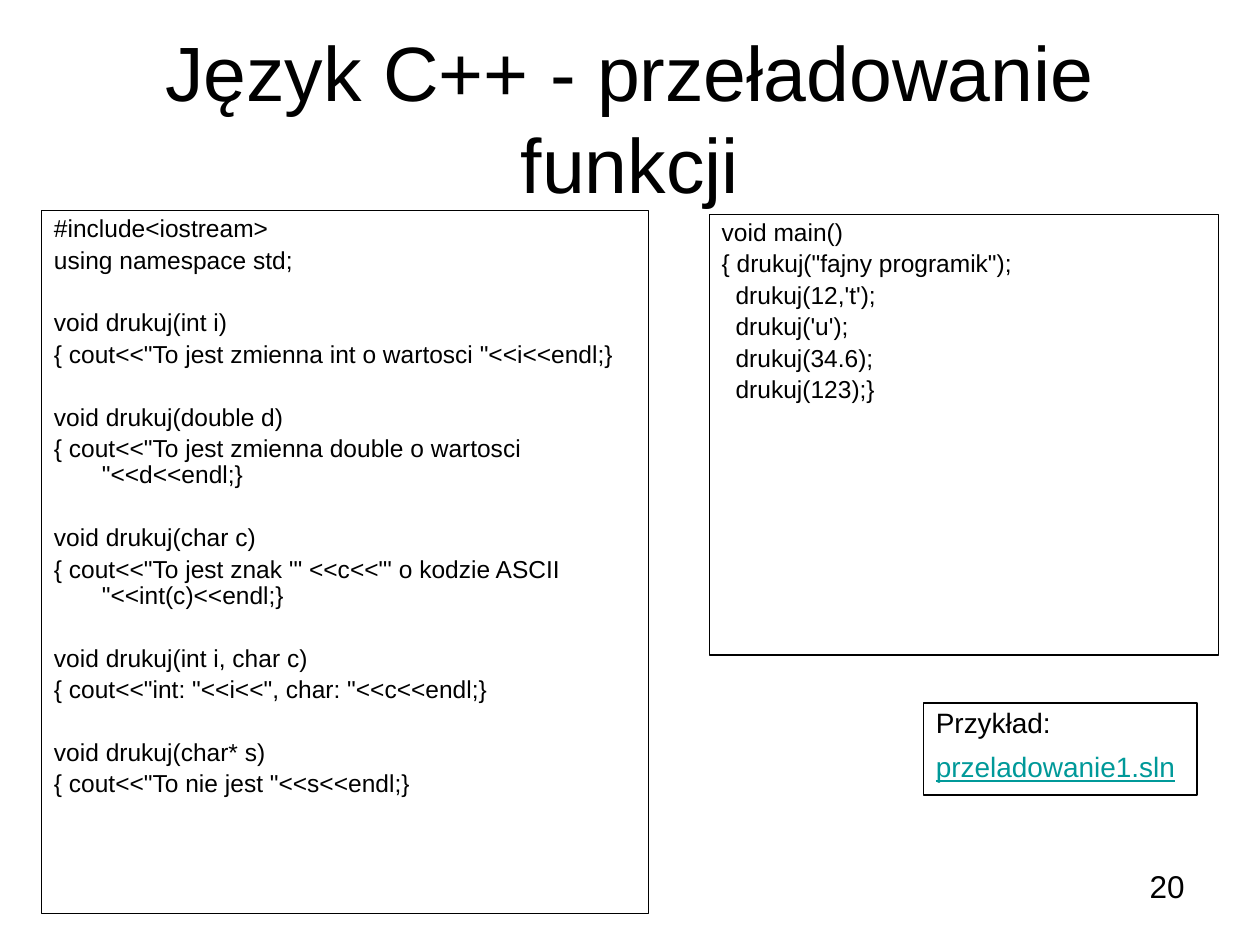
import pptx
import pptx.util
import pptx.dml.color
import pptx.enum.shapes
import pptx.enum.text

Inches = pptx.util.Inches
Pt = pptx.util.Pt
RGBColor = pptx.dml.color.RGBColor
PP_ALIGN = pptx.enum.text.PP_ALIGN
MSO_ANCHOR = pptx.enum.text.MSO_ANCHOR
MSO_AUTO_SIZE = pptx.enum.text.MSO_AUTO_SIZE
MSO_SHAPE = pptx.enum.shapes.MSO_SHAPE

BLACK = RGBColor(0x00, 0x00, 0x00)
TEAL = RGBColor(0x00, 0x99, 0x99)

HANGING = 0.38
NESTED = 0.11
LINE_GAP = Pt(2.8)
GROUP_GAP = Pt(20.7)

FUNCTIONS = [
    ["#include<iostream>", "using namespace std;"],
    ["void drukuj(int i)",
     "{ cout<<\"To jest zmienna int o wartosci \"<<i<<endl;}"],
    ["void drukuj(double d)",
     "{ cout<<\"To jest zmienna double o wartosci \"<<d<<endl;}"],
    ["void drukuj(char c)",
     "{ cout<<\"To jest znak '\" <<c<<\"' o kodzie ASCII \"<<int(c)<<endl;}"],
    ["void drukuj(int i, char c)",
     "{ cout<<\"int: \"<<i<<\", char: \"<<c<<endl;}"],
    ["void drukuj(char* s)",
     "{ cout<<\"To nie jest \"<<s<<endl;}"],
]
MAIN_START = ["void main()", "{ drukuj(\"fajny programik\");"]
MAIN_CALLS = ["drukuj(12,'t');", "drukuj('u');", "drukuj(34.6);", "drukuj(123);}"]


def apply(obj, values):
    for name, value in values.items():
        setattr(obj, name, value)


class SlideBuilder:
    def __init__(self, slide, font="Arial"):
        self.slide = slide
        self.font = font

    def paragraph(self, p, text, size, color=BLACK, underline=None, **layout):
        apply(p, layout)
        r = p.add_run()
        r.text = text
        apply(r.font, {"name": self.font, "size": Pt(size), "underline": underline})
        r.font.color.rgb = color

    def text(self, box, text, size, align, anchor=MSO_ANCHOR.TOP):
        tf = self.slide.shapes.add_textbox(*map(Inches, box)).text_frame
        apply(tf, {"word_wrap": True, "vertical_anchor": anchor})
        self.paragraph(tf.paragraphs[0], text, size, alignment=align)

    def frame(self, box, auto_size=MSO_AUTO_SIZE.NONE):
        sp = self.slide.shapes.add_shape(MSO_SHAPE.RECTANGLE, *map(Inches, box))
        sp.shadow.inherit = False
        sp.fill.background()
        sp.line.color.rgb = BLACK
        sp.line.width = Pt(0.75)
        tf = sp.text_frame
        apply(tf, {"word_wrap": True, "vertical_anchor": MSO_ANCHOR.TOP,
                   "auto_size": auto_size})
        return tf

    def code(self, box, lines):
        tf = self.frame(box)
        for i, (text, gap, nesting) in enumerate(lines):
            p = tf.add_paragraph() if i else tf.paragraphs[0]
            self.paragraph(p, text, 14, alignment=PP_ALIGN.LEFT,
                           line_spacing=0.9, space_before=gap)
            pPr = p._p.get_or_add_pPr()
            pPr.set("marL", str(Inches(HANGING + nesting)))
            pPr.set("indent", str(Inches(-HANGING)))

    def example(self, box, label, file_name):
        tf = self.frame(box, MSO_AUTO_SIZE.SHAPE_TO_FIT_TEXT)
        layout = {"alignment": PP_ALIGN.LEFT, "line_spacing": 0.9,
                  "space_before": Pt(8)}
        self.paragraph(tf.paragraphs[0], label, 16, **layout)
        self.paragraph(tf.add_paragraph(), file_name, 16, TEAL, True, **layout)


def main():
    prs = pptx.Presentation()
    prs.slide_width, prs.slide_height = Inches(10), Inches(7.5)
    s = SlideBuilder(prs.slides.add_slide(prs.slide_layouts[6]))

    s.text((7.17, 6.83, 2.33, 0.52), "20", 18, PP_ALIGN.RIGHT)
    s.text((0.5, 0.3, 9, 1.25), "Język C++ - przeładowanie funkcji", 44,
           PP_ALIGN.CENTER, MSO_ANCHOR.MIDDLE)

    functions = [(text, GROUP_GAP if g and not i else LINE_GAP, 0)
                 for g, group in enumerate(FUNCTIONS)
                 for i, text in enumerate(group)]
    s.code((0.33, 1.67, 4.82, 5.58), functions)

    calls = [(text, LINE_GAP, 0) for text in MAIN_START]
    calls += [(text, LINE_GAP, NESTED) for text in MAIN_CALLS]
    s.code((5.63, 1.7, 4.04, 3.5), calls)

    s.example((7.33, 5.58, 2.17, 0.73), "Przykład:", "przeladowanie1.sln")
    prs.save("out.pptx")


if __name__ == "__main__":
    main()
